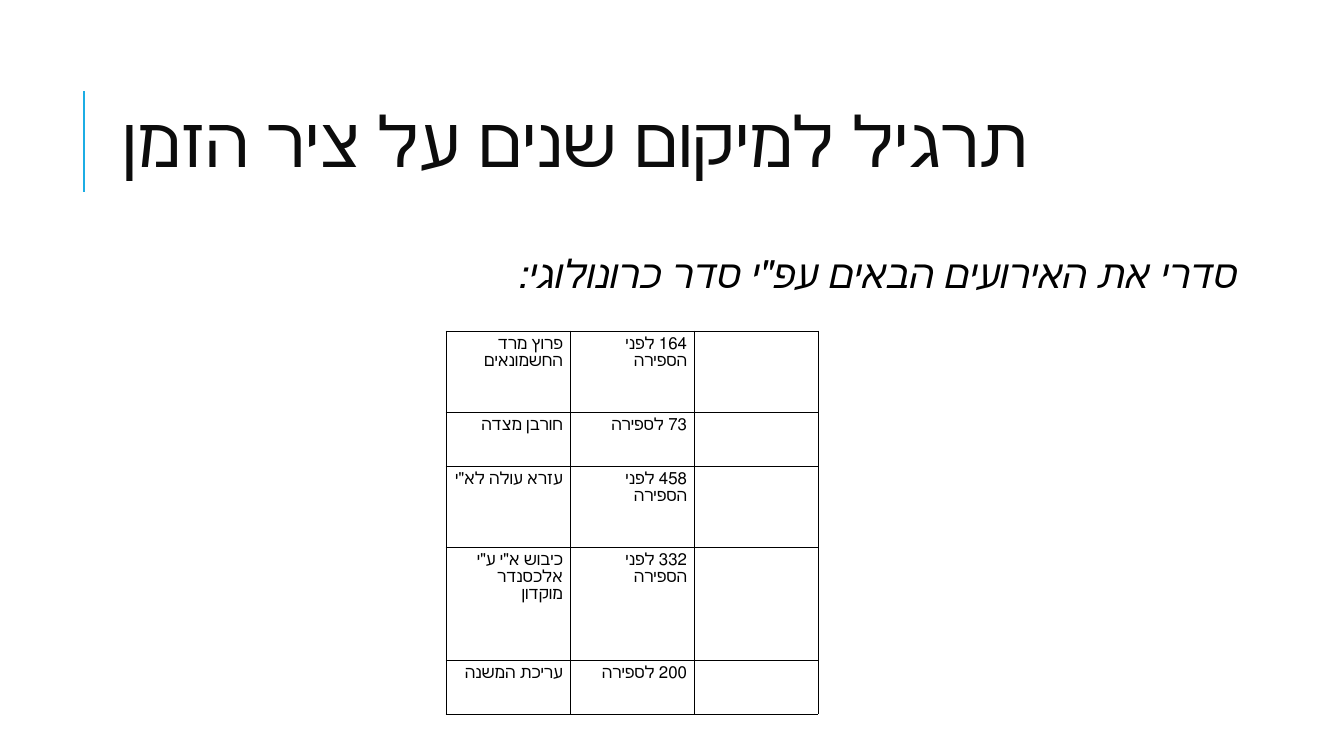
from lxml.etree import SubElement
from pptx import Presentation
from pptx.dml.color import RGBColor
from pptx.enum.shapes import MSO_CONNECTOR
from pptx.enum.text import MSO_ANCHOR, PP_ALIGN
from pptx.oxml.ns import qn
from pptx.util import Pt

TITLE = "תרגיל למיקום שנים על ציר הזמן"
TASK = 'סדרי את האירועים הבאים עפ"י סדר כרונולוגי:'
EVENTS = [  # event, year, row height in px
    ("פרוץ מרד החשמונאים", "164 לפני הספירה", 81),
    ("חורבן מצדה", "73 לספירה", 54),
    ('עזרא עולה לא"י', "458 לפני הספירה", 81),
    ('כיבוש א"י ע"י אלכסנדר מוקדון', "332 לפני הספירה", 113),
    ("עריכת המשנה", "200 לספירה", 54),
]
COLS, COL_W = 3, 124

BLACK = RGBColor(0, 0, 0)
INK = RGBColor(0x0C, 0x0C, 0x0C)
BLUE = RGBColor(0x1C, 0xAD, 0xE4)


def px(n):
    return round(n * 914400 / 100.8)


def write(para, text, font, size, color, align=PP_ALIGN.RIGHT):
    """Fill a right-to-left paragraph."""
    para.text = text
    para.alignment = align
    para.font.name = font
    para.font.size = Pt(size)
    para.font.color.rgb = color
    para._p.get_or_add_pPr().set("rtl", "1")


def add_text(slide, box, *style):
    frame = slide.shapes.add_textbox(*map(px, box)).text_frame
    frame.word_wrap = True
    frame.vertical_anchor = MSO_ANCHOR.MIDDLE
    para = frame.paragraphs[0]
    write(para, *style)
    return para


def add_borders(cell):
    props = cell._tc.get_or_add_tcPr()
    for i, side in enumerate(("lnL", "lnR", "lnT", "lnB")):
        line = props.makeelement(qn(f"a:{side}"), {"w": str(Pt(0.5))})
        fill = SubElement(line, qn("a:solidFill"))
        SubElement(fill, qn("a:srgbClr"), val=str(BLACK))
        props.insert(i, line)


def add_events(slide):
    high = sum(row[-1] for row in EVENTS)
    frame = slide.shapes.add_table(
        len(EVENTS), COLS, px(446), px(331), px(COLS * COL_W), px(high))
    table = frame.table
    table.first_row = table.horz_banding = False
    for col in table.columns:
        col.width = px(COL_W)
    for r, (*texts, height) in enumerate(EVENTS):
        table.rows[r].height = px(height)
        for c in range(COLS):
            cell = table.cell(r, c)
            cell.fill.background()
            cell.margin_left = cell.margin_right = px(7)
            cell.margin_top = cell.margin_bottom = px(5)
            add_borders(cell)
            if c < len(texts):
                para = cell.text_frame.paragraphs[0]
                write(para, texts[c], "Calibri", 12, BLACK)
                para.space_after = Pt(8)


def main():
    deck = Presentation()
    deck.slide_width, deck.slide_height = px(1344), px(756)
    slide = deck.slides.add_slide(deck.slide_layouts[6])

    bar = slide.shapes.add_connector(
        MSO_CONNECTOR.STRAIGHT, px(84), px(192), px(84), px(91))
    bar.line.color.rgb = BLUE
    bar.line.width = Pt(1.5)
    SubElement(bar._element.spPr, qn("a:effectLst"))

    title = add_text(slide, (113, 65, 1072, 165),
                     TITLE, "Cambria", 50, INK, PP_ALIGN.LEFT)
    title.line_spacing = 0.8
    task = add_text(slide, (493, 243, 752, 60), TASK, "Calibri", 28, BLACK)
    task.font.italic = True
    add_events(slide)
    deck.save("out.pptx")


if __name__ == "__main__":
    main()
